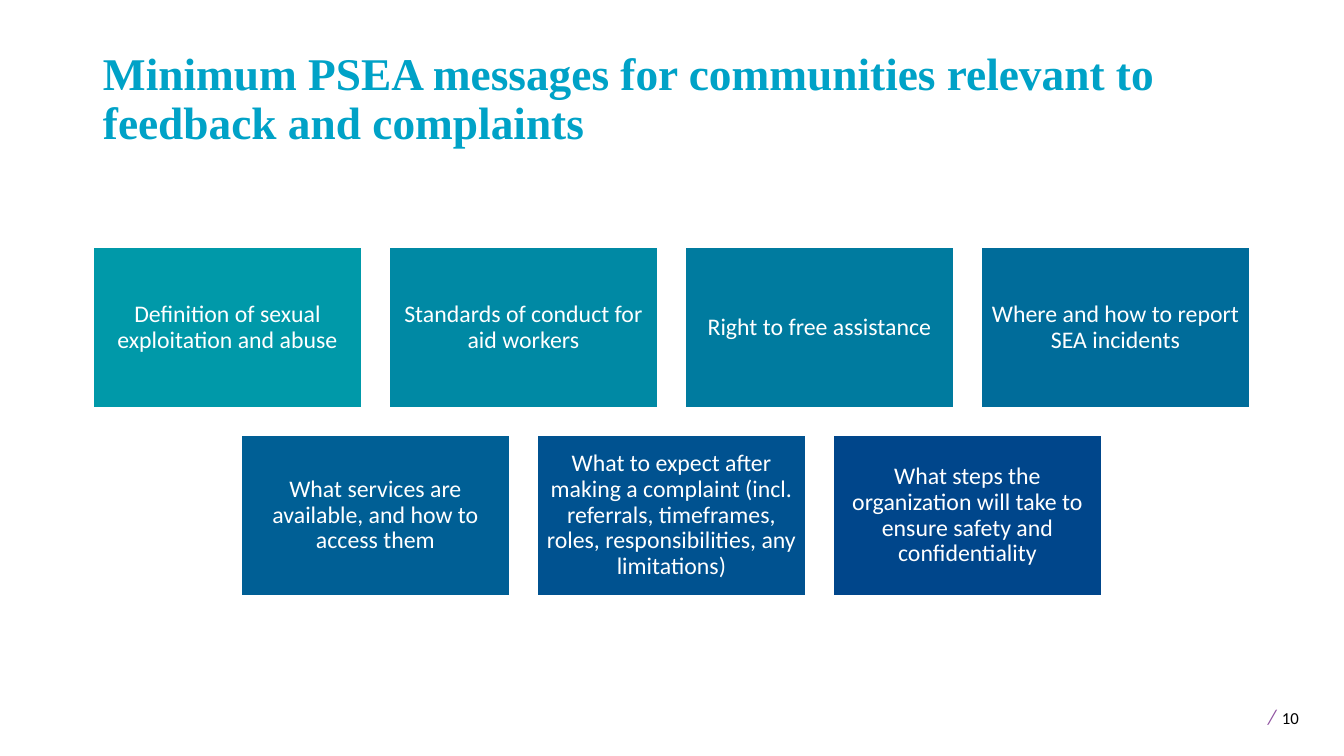
from pptx import Presentation
from pptx.dml.color import RGBColor
from pptx.enum.shapes import MSO_SHAPE as Shape
from pptx.enum.text import MSO_ANCHOR as Anchor, MSO_AUTO_SIZE as Auto, PP_ALIGN as Align
from pptx.util import Pt

TITLE = "Minimum PSEA messages for communities relevant to feedback and complaints"
ROWS = [
    [
        ("Definition of sexual exploitation and abuse", RGBColor(0x00, 0x99, 0xA9)),
        ("Standards of conduct for aid workers", RGBColor(0x00, 0x89, 0xA4)),
        ("Right to free assistance", RGBColor(0x00, 0x7B, 0x9F)),
        ("Where and how to report SEA incidents", RGBColor(0x00, 0x6C, 0x9A)),
    ],
    [
        ("What services are available, and how to access them", RGBColor(0x00, 0x5F, 0x95)),
        ("What to expect after making a complaint (incl. referrals, timeframes, "
         "roles, responsibilities, any limitations)", RGBColor(0x00, 0x52, 0x90)),
        ("What steps the organization will take to ensure safety and confidentiality",
         RGBColor(0x00, 0x46, 0x8B)),
    ],
]
WHITE = RGBColor(0xFF, 0xFF, 0xFF)
BLACK = RGBColor(0x00, 0x00, 0x00)
CYAN = RGBColor(0x00, 0xA2, 0xC7)
PURPLE = RGBColor(0x90, 0x53, 0xA1)
PAGE = [("/", 15, PURPLE, True), (" ", 18, BLACK, False), ("10", 12, BLACK, False)]

WIDE, HIGH = 1344, 756
CARD_W, CARD_H, GAP, TOP = 269, 161, 27, 247


def px(n):
    return round(n * 914400 / 100.8)


def add_run(para, text, size, color, font="Calibri", bold=False, italic=False):
    run = para.add_run()
    run.text = text
    run.font.name = font
    run.font.size = Pt(size)
    run.font.bold = bold
    run.font.italic = italic
    run.font.color.rgb = color


def set_pads(frame, side, edge):
    frame.margin_left = frame.margin_right = px(side)
    frame.margin_top = frame.margin_bottom = px(edge)


def add_title(slide):
    title = slide.shapes.title
    title.left, title.top, title.width, title.height = map(px, (93, 40, 1159, 114))
    frame = title.text_frame
    frame.word_wrap = True
    frame.auto_size = Auto.NONE
    frame.vertical_anchor = Anchor.BOTTOM
    set_pads(frame, 10, 5)
    para = frame.paragraphs[0]
    para.alignment = Align.LEFT
    para.line_spacing = 0.9
    add_run(para, TITLE, 32.4, CYAN, "Times New Roman", bold=True)


def add_card(slide, left, top, text, color):
    card = slide.shapes.add_shape(Shape.RECTANGLE, *map(px, (left, top, CARD_W, CARD_H)))
    card.shadow.inherit = False
    card.fill.solid()
    card.fill.fore_color.rgb = color
    card.line.color.rgb = WHITE
    card.line.width = Pt(1)
    frame = card.text_frame
    frame.word_wrap = True
    frame.vertical_anchor = Anchor.MIDDLE
    set_pads(frame, 7, 7)
    para = frame.paragraphs[0]
    para.alignment = Align.CENTER
    para.line_spacing = 0.9
    add_run(para, text, 17, WHITE)


def add_page(slide):
    frame = slide.shapes.add_textbox(*map(px, (1258, 694, 83, 40))).text_frame
    frame.word_wrap = True
    set_pads(frame, 10, 5)
    for text, size, color, slant in PAGE:
        add_run(frame.paragraphs[0], text, size, color, italic=slant)


def main():
    deck = Presentation()
    deck.slide_width, deck.slide_height = px(WIDE), px(HIGH)
    slide = deck.slides.add_slide(deck.slide_layouts[5])
    add_title(slide)
    for i, row in enumerate(ROWS):
        span = len(row) * (CARD_W + GAP) - GAP
        for j, (text, color) in enumerate(row):
            left = (WIDE - span) // 2 + j * (CARD_W + GAP)
            add_card(slide, left, TOP + i * (CARD_H + GAP), text, color)
    add_page(slide)
    deck.save("out.pptx")


if __name__ == "__main__":
    main()
